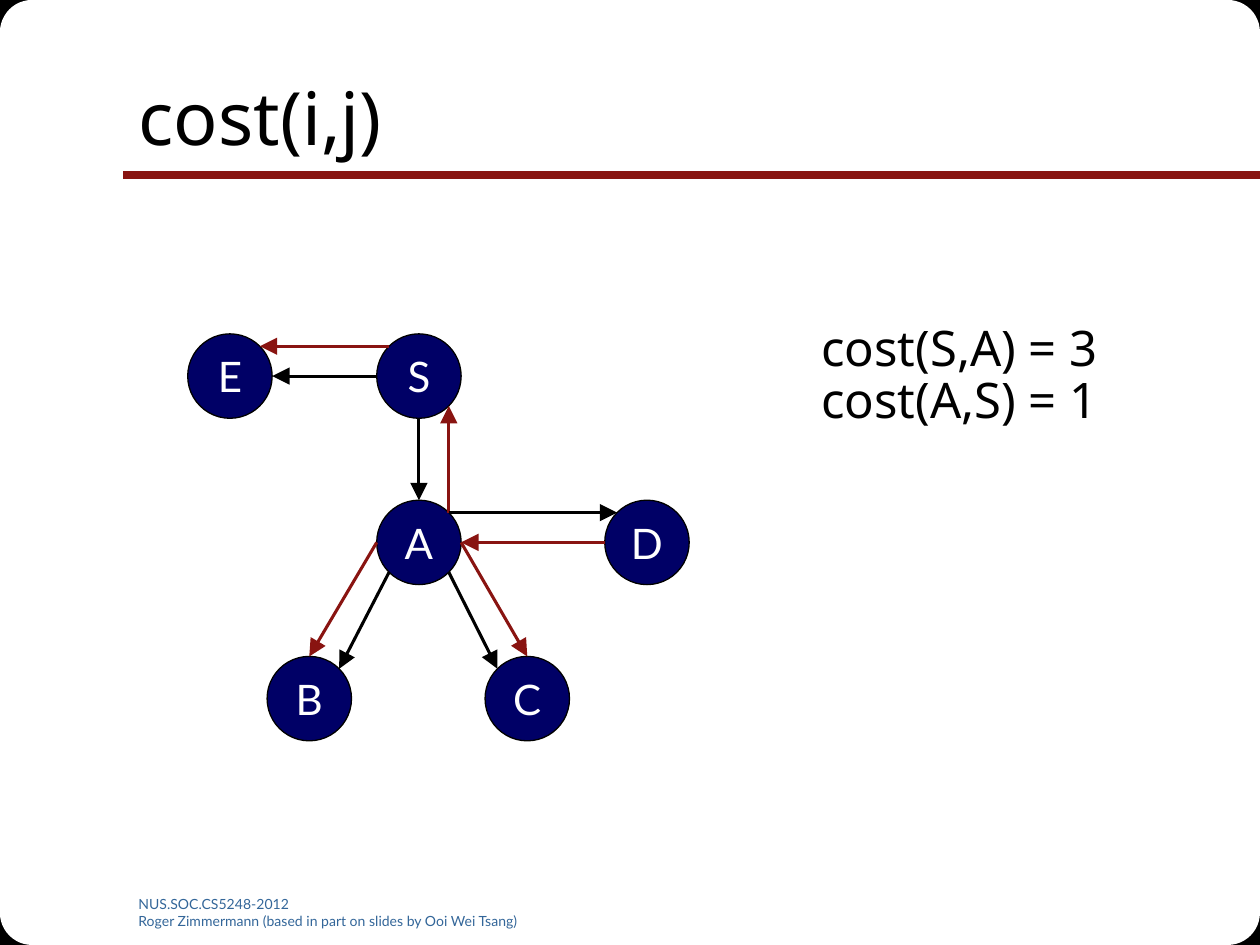
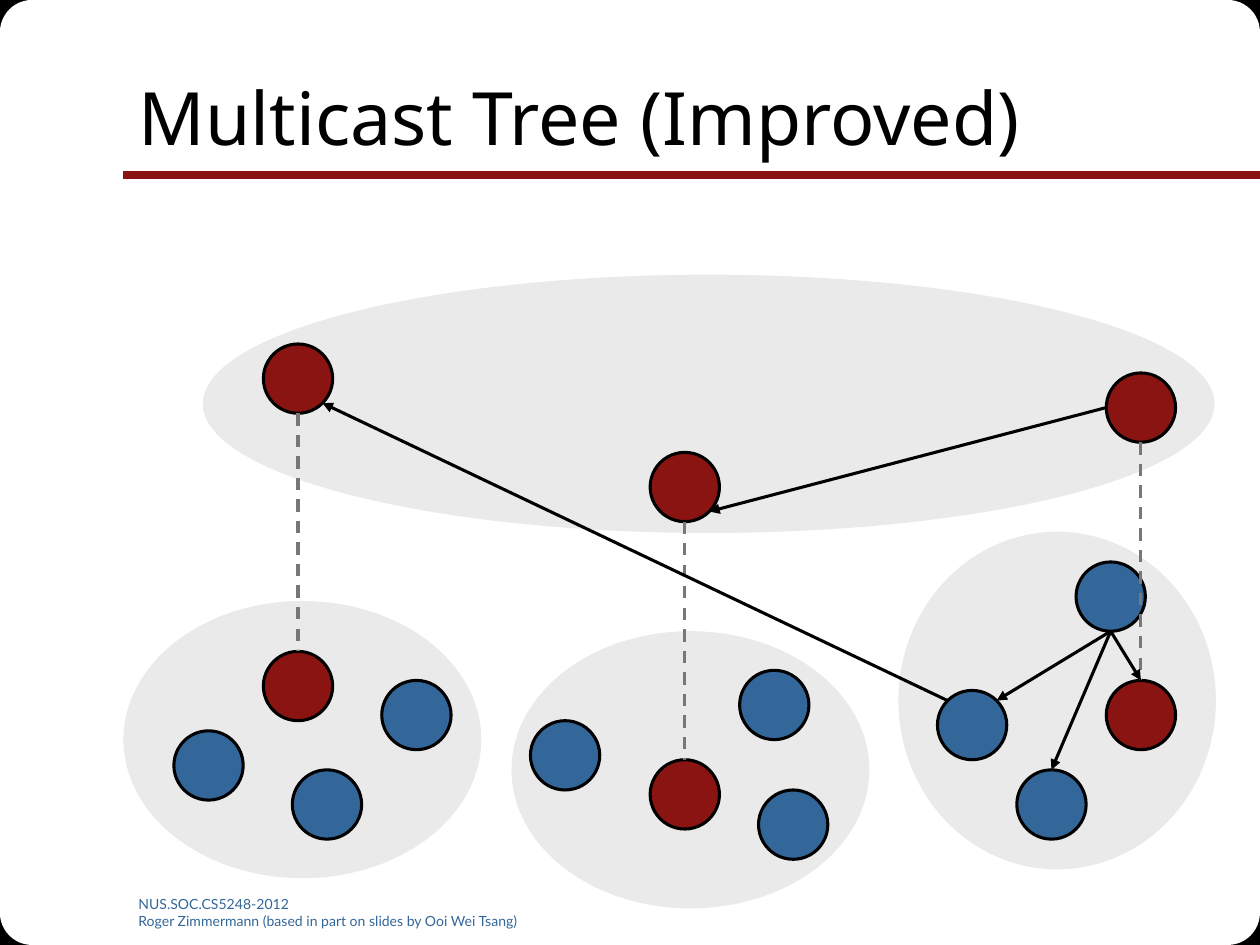
import math

import lxml.etree
import pptx
import pptx.dml.color
import pptx.enum.dml
import pptx.enum.shapes
import pptx.enum.text
import pptx.oxml.ns
import pptx.util

Inches = pptx.util.Inches
SHAPES = pptx.enum.shapes.MSO_SHAPE
ALIGN = pptx.enum.text.PP_ALIGN
ANCHOR = pptx.enum.text.MSO_ANCHOR

BLACK, WHITE, GREY, PALE = "000000", "FFFFFF", "777777", "EAEAEA"
RED, BLUE, NAVY = "891411", "336699", "000066"
HEADING_FONT, LABEL_FONT = "Noto Sans", "Lato"
FOOTER = ["NUS.SOC.CS5248-2012",
          "Roger Zimmermann (based in part on slides by Ooi Wei Tsang)"]

# Points on a circle where arrows attach, in units of the radius
DIAGONAL = math.sqrt(0.5)
SITES = {
    "top": (0, -1), "bottom": (0, 1), "left": (-1, 0), "right": (1, 0),
    "top left": (-DIAGONAL, -DIAGONAL), "top right": (DIAGONAL, -DIAGONAL),
    "bottom left": (-DIAGONAL, DIAGONAL), "bottom right": (DIAGONAL, DIAGONAL),
}


def add_filled_shape(slide, kind, box, fill, outline=None, width=0.75):
    shape = slide.shapes.add_shape(kind, *[Inches(length) for length in box])
    shape.shadow.inherit = False
    shape.fill.solid()
    shape.fill.fore_color.rgb = pptx.dml.color.RGBColor.from_string(fill)
    if outline:
        shape.line.color.rgb = pptx.dml.color.RGBColor.from_string(outline)
        shape.line.width = pptx.util.Pt(width)
    else:
        shape.line.fill.background()
    return shape


def add_line(slide, start, end, colour, width=1.75, head=None):
    line = slide.shapes.add_connector(
        pptx.enum.shapes.MSO_CONNECTOR.STRAIGHT,
        *[Inches(length) for length in (*start, *end)])
    line.line.color.rgb = pptx.dml.color.RGBColor.from_string(colour)
    line.line.width = pptx.util.Pt(width)
    if head:
        lxml.etree.SubElement(line.line._get_or_add_ln(),
                              pptx.oxml.ns.qn("a:tailEnd"),
                              type="triangle", w=head, len=head)
    lxml.etree.SubElement(line.element.spPr, pptx.oxml.ns.qn("a:effectLst"))
    return line


presentation = pptx.Presentation()
presentation.slide_width, presentation.slide_height = Inches(10), Inches(7.5)
layout = presentation.slide_layouts[5]
cost_slide = presentation.slides.add_slide(layout)
tree_slide = presentation.slides.add_slide(layout)

# Shared frame: rounded black corners and the red rule, moved to the layout
frame = []
for kind, width, height, fill, outline in [
        (SHAPES.RECTANGLE, 0.43, 0.44, BLACK, BLACK),
        (SHAPES.ROUNDED_RECTANGLE, 1.53, 1.53, WHITE, None)]:
    for left in (0, 10 - width):
        for top in (0, 7.5 - height):
            frame.append(add_filled_shape(
                cost_slide, kind, (left, top, width, height), fill, outline))
frame.append(add_line(cost_slide, (10, 1.39), (0.98, 1.39), RED, 4.5))
for number, shape in enumerate(frame, 100):
    shape.element.xpath(".//p:cNvPr")[0].set("id", str(number))
    layout.shapes.element.append(shape.element)

# Titles and footers; every text is collected and set in one place below
texts = []
for slide, heading in [(cost_slide, "cost(i,j)"),
                       (tree_slide, "Multicast Tree (Improved)")]:
    title = slide.shapes.title
    title.left, title.top = Inches(1), Inches(0.3)
    title.width, title.height = Inches(8.5), Inches(1.25)
    title.text_frame.vertical_anchor = ANCHOR.MIDDLE
    title.text_frame.auto_size = pptx.enum.text.MSO_AUTO_SIZE.NONE
    texts.append((title, [heading], 42, HEADING_FONT, BLACK, ALIGN.LEFT))

    footer = slide.shapes.add_textbox(
        Inches(1), Inches(7.06), Inches(3.42), Inches(0.28))
    footer.text_frame.word_wrap = True
    texts.append((footer, FOOTER, 8, LABEL_FONT, BLUE, ALIGN.LEFT))

# Clusters of the multicast tree
for box in [(1.61, 2.18, 8.03, 2.05), (7.13, 4.22, 2.52, 2.68),
            (4.06, 5.01, 2.84, 2.2), (0.98, 4.77, 2.84, 2.2)]:
    add_filled_shape(tree_slide, SHAPES.OVAL, box, PALE)

# Nodes: name, left, top, fill
cost_nodes = [(name, left, top, NAVY) for name, left, top in [
    ("S", 2.99, 2.65), ("A", 2.99, 3.97), ("B", 2.12, 5.21),
    ("C", 3.85, 5.21), ("D", 4.8, 3.97), ("E", 1.49, 2.65)]]
tree_nodes = [
    ("left 1", 1.38, 5.8, BLUE), ("left leader", 2.09, 5.17, RED),
    ("left 2", 2.32, 6.11, BLUE), ("left 3", 3.03, 5.4, BLUE),
    ("middle 1", 4.21, 5.72, BLUE), ("middle 2", 6.02, 6.27, BLUE),
    ("middle leader", 5.16, 6.03, RED), ("middle 3", 5.87, 5.32, BLUE),
    ("source", 8.54, 4.46, BLUE), ("relay", 7.44, 5.48, BLUE),
    ("leaf", 8.07, 6.11, BLUE), ("right leader", 8.78, 5.4, RED),
    ("left top", 2.09, 2.73, RED), ("middle top", 5.16, 3.59, RED),
    ("right top", 8.78, 2.96, RED),
]

# Links: from node and site, to node and site, colour (grey ones are dashed)
cost_links = [
    ("S", "bottom", "A", "top", BLACK),
    ("A", "bottom right", "C", "top left", BLACK),
    ("A", "bottom left", "B", "top right", BLACK),
    ("D", "left", "A", "right", RED),
    ("A", "top right", "S", "bottom right", RED),
    ("S", "top left", "E", "top right", RED),
    ("A", "top right", "D", "top left", BLACK),
    ("S", "left", "E", "right", BLACK),
    ("A", "right", "C", "top", RED),
    ("A", "left", "B", "top", RED),
]
tree_links = [(f"{side} top", "bottom", f"{side} leader", "top", GREY)
              for side in ("left", "middle", "right")]
tree_links += [
    ("source", "bottom", "right leader", "top", BLACK),
    ("source", "bottom", "leaf", "top", BLACK),
    ("source", "bottom", "relay", "top right", BLACK),
    ("relay", "top left", "left top", "bottom right", BLACK),
    ("right top", "left", "middle top", "bottom right", BLACK),
]

# Draw both graphs
for slide, nodes, links, diameter, outline_width, head in [
        (cost_slide, cost_nodes, cost_links, 0.67, 0.75, "lg"),
        (tree_slide, tree_nodes, tree_links, 0.55, 1.75, "med")]:
    radius = diameter / 2
    centres = {}
    for name, left, top, fill in nodes:
        centres[name] = (left + radius, top + radius)
        node = add_filled_shape(slide, SHAPES.OVAL, (left, top, diameter, diameter),
                                fill, BLACK, outline_width)
        if slide is cost_slide:
            node.text_frame.word_wrap = False
            node.text_frame.vertical_anchor = ANCHOR.MIDDLE
            texts.append((node, [name], 24, LABEL_FONT, WHITE, ALIGN.CENTER))
    for source, source_site, target, target_site, colour in links:
        start, end = [
            [centre + radius * offset
             for centre, offset in zip(centres[name], SITES[site])]
            for name, site in ((source, source_site), (target, target_site))]
        dashed = colour == GREY
        line = add_line(slide, start, end, colour, head=None if dashed else head)
        if dashed:
            line.line.dash_style = pptx.enum.dml.MSO_LINE.DASH

# Cost examples
costs = cost_slide.shapes.add_textbox(
    Inches(6.33), Inches(2.52), Inches(2.57), Inches(1.03))
costs.text_frame.word_wrap = False
texts.append((costs, ["cost(S,A) = 3", "cost(A,S) = 1"],
              28, HEADING_FONT, BLACK, ALIGN.CENTER))

# Set all text
for shape, lines, size, font, colour, alignment in texts:
    for index, text in enumerate(lines):
        frame_text = shape.text_frame
        paragraph = frame_text.add_paragraph() if index else frame_text.paragraphs[0]
        paragraph.alignment = alignment
        if shape is costs:
            paragraph.line_spacing = 0.9
        run = paragraph.add_run()
        run.text = text
        run.font.size = pptx.util.Pt(size)
        run.font.name = font
        run.font.color.rgb = pptx.dml.color.RGBColor.from_string(colour)

presentation.save("out.pptx")
